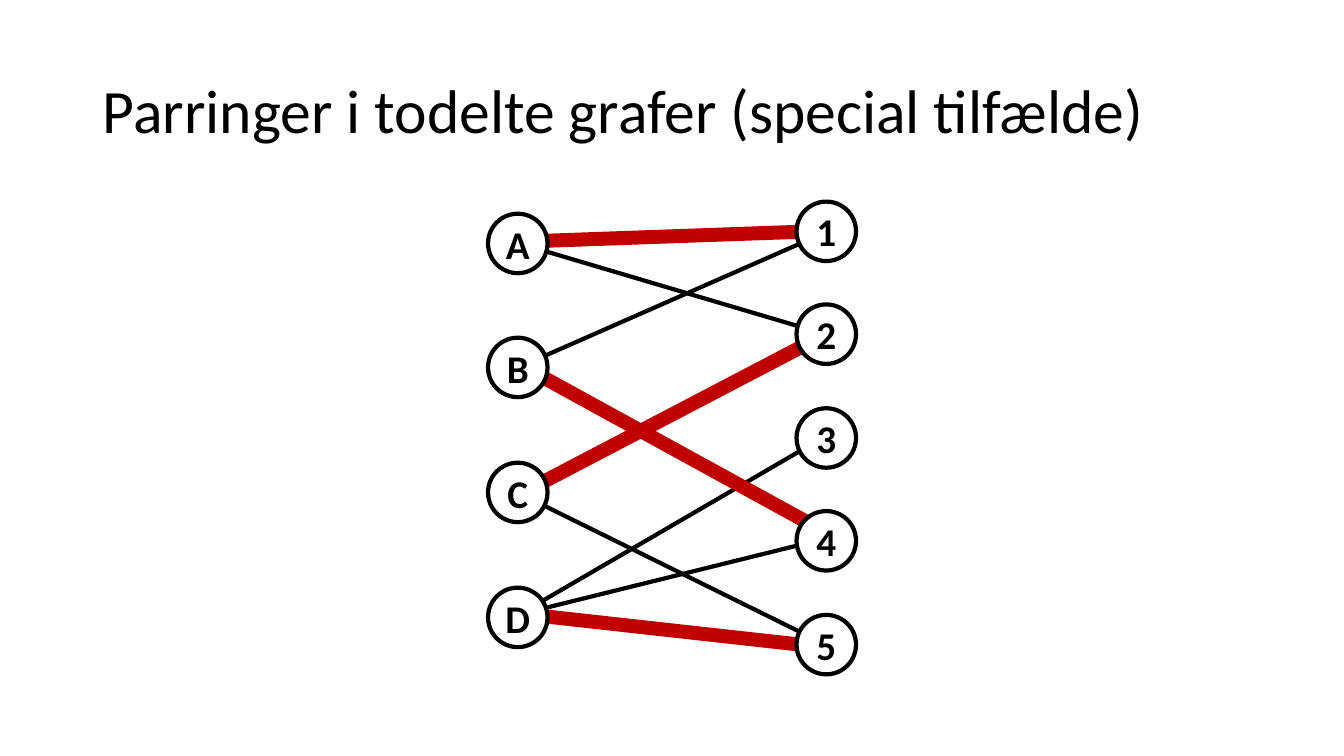
from pptx import Presentation
from pptx.dml.color import RGBColor as RGB
from pptx.enum.shapes import MSO_CONNECTOR as CONN, MSO_SHAPE as SHAPE
from pptx.enum.text import MSO_ANCHOR as ANCHOR, MSO_AUTO_SIZE as AUTO, PP_ALIGN as ALIGN
from pptx.oxml.ns import qn
from pptx.util import Pt
from lxml import etree

PX = 9144
HUES = {"ink": "000000", "match": "C00000", "paper": "FFFFFF"}
FRAME = {"vertical_anchor": ANCHOR.MIDDLE, "auto_size": AUTO.NONE}
TIGHT = {"margin_left": 0, "margin_right": 0, "margin_top": 0, "margin_bottom": 0, "word_wrap": False}


def hue(name):
    return RGB.from_string(HUES[name])


def write(shape, text, size, bold, align, frame):
    body = shape.text_frame
    for key, value in frame.items():
        setattr(body, key, value)
    para = body.paragraphs[0]
    para.alignment = align
    run = para.add_run()
    run.text = text
    for key, value in {"name": "Calibri", "size": Pt(size), "bold": bold}.items():
        setattr(run.font, key, value)
    run.font.color.rgb = hue("ink")
    return para


deck = Presentation()
deck.slide_width = 1333 * PX
deck.slide_height = 750 * PX
slide = deck.slides.add_slide(deck.slide_layouts[5])
shapes = slide.shapes

title = shapes.title
for key, value in {"left": 92, "top": 40, "width": 1150, "height": 145}.items():
    setattr(title, key, value * PX)
head = write(title, "Parringer i todelte grafer (special tilfælde)", 44, False,
             ALIGN.LEFT, {**FRAME, "word_wrap": True})
head.line_spacing = 0.9

edges = [
    (513, 241, 820, 228),
    (513, 241, 820, 332),
    (513, 365, 820, 230),
    (512, 491, 827, 330),
    (512, 488, 820, 640),
    (513, 610, 820, 640),
    (513, 610, 820, 534),
    (516, 609, 820, 432),
    (518, 361, 820, 533),
]
pairs = [
    (509, 240, 821, 229),
    (518, 363, 826, 532),
    (516, 490, 820, 331),
    (518, 609, 816, 642),
]
for ends, tone, width in [(edges, "ink", 3), (pairs, "match", 10)]:
    for end in ends:
        edge = shapes.add_connector(CONN.STRAIGHT, *[n * PX for n in end])
        edge.line.color.rgb = hue(tone)
        edge.line.width = Pt(width)
        etree.SubElement(edge.line._get_or_add_ln().getparent(), qn("a:effectLst"))

size = 59
for names, left, top, span in [("ABCD", 484, 212, 371), ("12345", 790, 200, 410)]:
    for i, name in enumerate(names):
        y = top + span * i // (len(names) - 1)
        node = shapes.add_shape(SHAPE.OVAL, left * PX, y * PX, size * PX, size * PX)
        node.shadow.inherit = False
        node.fill.solid()
        node.fill.fore_color.rgb = hue("paper")
        node.line.color.rgb = hue("ink")
        node.line.width = Pt(3)
        write(node, name, 28, True, ALIGN.CENTER, {**FRAME, **TIGHT})

deck.save("out.pptx")
